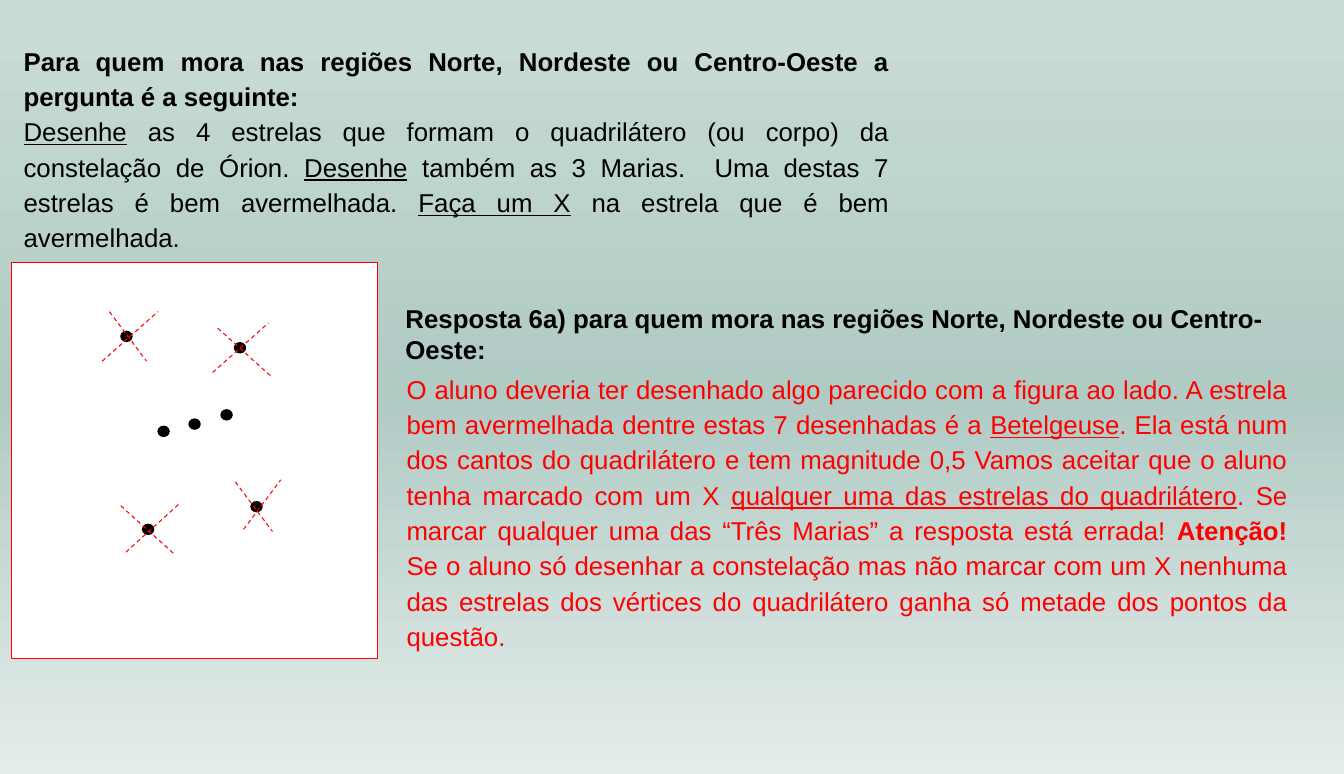
from copy import deepcopy

from pptx import Presentation
from pptx.dml.color import RGBColor
from pptx.enum.dml import MSO_LINE
from pptx.enum.shapes import MSO_CONNECTOR, MSO_SHAPE
from pptx.enum.text import MSO_AUTO_SIZE, PP_ALIGN
from pptx.oxml.ns import qn
from pptx.oxml.xmlchemy import OxmlElement
from pptx.util import Emu, Pt

PX = 9144  # 100 px to the inch
BLACK, RED, WHITE = "000000", "FF0000", "FFFFFF"
SKY = [(0, "CADCD8"), (0.51, "B0CAC4"), (1, "E5EDEB")]

PLAIN, BOLD, UNDERLINED = {}, {"bold": True}, {"underline": True}
JUSTIFIED = {"alignment": PP_ALIGN.JUSTIFY, "line_spacing": 1.14}

QUESTION = [
    [("Para quem mora nas regiões Norte, Nordeste ou Centro-Oeste a "
      "pergunta é a seguinte:", BOLD)],
    [("Desenhe", UNDERLINED),
     (" as 4 estrelas que formam o quadrilátero (ou corpo) da "
      "constelação de Órion. ", PLAIN),
     ("Desenhe", UNDERLINED),
     (" também as 3 Marias.  Uma destas 7 estrelas é bem avermelhada. ", PLAIN),
     ("Faça um X", UNDERLINED),
     (" na estrela que é bem avermelhada.", PLAIN)],
]
ANSWER_TITLE = [[("Resposta 6a) para quem mora nas regiões Norte, Nordeste ou "
                  "Centro-Oeste:", BOLD)]]
ANSWER = [
    [("O aluno deveria ter desenhado algo parecido com a figura ao lado. A "
      "estrela bem avermelhada dentre estas 7 desenhadas é a ", PLAIN),
     ("Betelgeuse", UNDERLINED),
     (". Ela está num dos cantos do quadrilátero e tem magnitude 0,5 Vamos "
      "aceitar que o aluno tenha marcado com um X ", PLAIN),
     ("qualquer uma das estrelas do quadrilátero", UNDERLINED),
     (". Se marcar qualquer uma das “Três Marias” a resposta está errada! ", PLAIN),
     ("Atenção!", BOLD),
     (" Se o aluno só desenhar a constelação mas não marcar com um X nenhuma "
      "das estrelas dos vértices do quadrilátero ganha só metade dos pontos "
      "da questão.", PLAIN)],
]

STAR_SIZE = (11, 10)
STARS = [(117, 321), (227, 332), (153, 413), (183, 406), (214, 397),
         (138, 508), (243, 486)]
# Each stroke of a cross: x and y of its start, x and y of its end
CROSS_STROKES = [
    (228, 467, 264, 515), (236, 513, 272, 465),
    (106, 302, 142, 350), (99, 350, 153, 302),
    (206, 361, 260, 313), (211, 318, 264, 366),
    (122, 535, 175, 487), (117, 490, 170, 538),
]


def px(*lengths):
    return [Emu(length * PX) for length in lengths]


def color(hex_value):
    return RGBColor.from_string(hex_value)


def apply_format(target, values):
    for name, value in values.items():
        setattr(target, name, value)


def paint_background(slide, stops):
    fill = slide.background.fill
    fill.gradient()
    fill.gradient_angle = 270
    stop_list = slide.element.find(".//" + qn("a:gsLst"))
    while len(stop_list) < len(stops):
        stop_list.append(deepcopy(stop_list[0]))
    for stop, (position, hex_value) in zip(fill.gradient_stops, stops):
        stop.position = position
        stop.color.rgb = color(hex_value)


def add_text(slide, box, paragraphs, hex_value, paragraph_format):
    frame = slide.shapes.add_textbox(*px(*box)).text_frame
    apply_format(frame, {"word_wrap": True,
                         "auto_size": MSO_AUTO_SIZE.SHAPE_TO_FIT_TEXT})
    for index, runs in enumerate(paragraphs):
        paragraph = frame.add_paragraph() if index else frame.paragraphs[0]
        apply_format(paragraph, paragraph_format)
        for text, style in runs:
            run = paragraph.add_run()
            run.text = text
            apply_format(run.font, {"name": "Arial", "size": Pt(18), **style})
            run.font.color.rgb = color(hex_value)


def add_figure(slide, kind, box, fill_hex, line_hex):
    figure = slide.shapes.add_shape(kind, *px(*box))
    figure.shadow.inherit = False
    figure.fill.solid()
    figure.fill.fore_color.rgb = color(fill_hex)
    figure.line.color.rgb = color(line_hex)
    figure.line.width = Pt(0.75)


def add_stroke(slide, ends):
    stroke = slide.shapes.add_connector(MSO_CONNECTOR.STRAIGHT, *px(*ends))
    stroke.line.color.rgb = color(RED)
    apply_format(stroke.line, {"width": Pt(0.75), "dash_style": MSO_LINE.DASH})
    stroke.element.spPr.append(OxmlElement("a:effectLst"))


def main():
    presentation = Presentation()
    presentation.slide_width, presentation.slide_height = px(1302, 750)
    slide = presentation.slides.add_slide(presentation.slide_layouts[6])
    paint_background(slide, SKY)

    # Question
    add_text(slide, (13, 35, 858, 217), QUESTION, BLACK, JUSTIFIED)

    # Orion: sky panel, stars and crosses
    add_figure(slide, MSO_SHAPE.RECTANGLE, (11, 254, 355, 384), WHITE, RED)
    for star in STARS:
        add_figure(slide, MSO_SHAPE.OVAL, star + STAR_SIZE, BLACK, BLACK)
    for ends in CROSS_STROKES:
        add_stroke(slide, ends)

    # Answer
    add_text(slide, (384, 353, 873, 286), ANSWER, RED, JUSTIFIED)
    add_text(slide, (383, 288, 866, 71), ANSWER_TITLE, BLACK, {})

    presentation.save("out.pptx")


if __name__ == "__main__":
    main()
